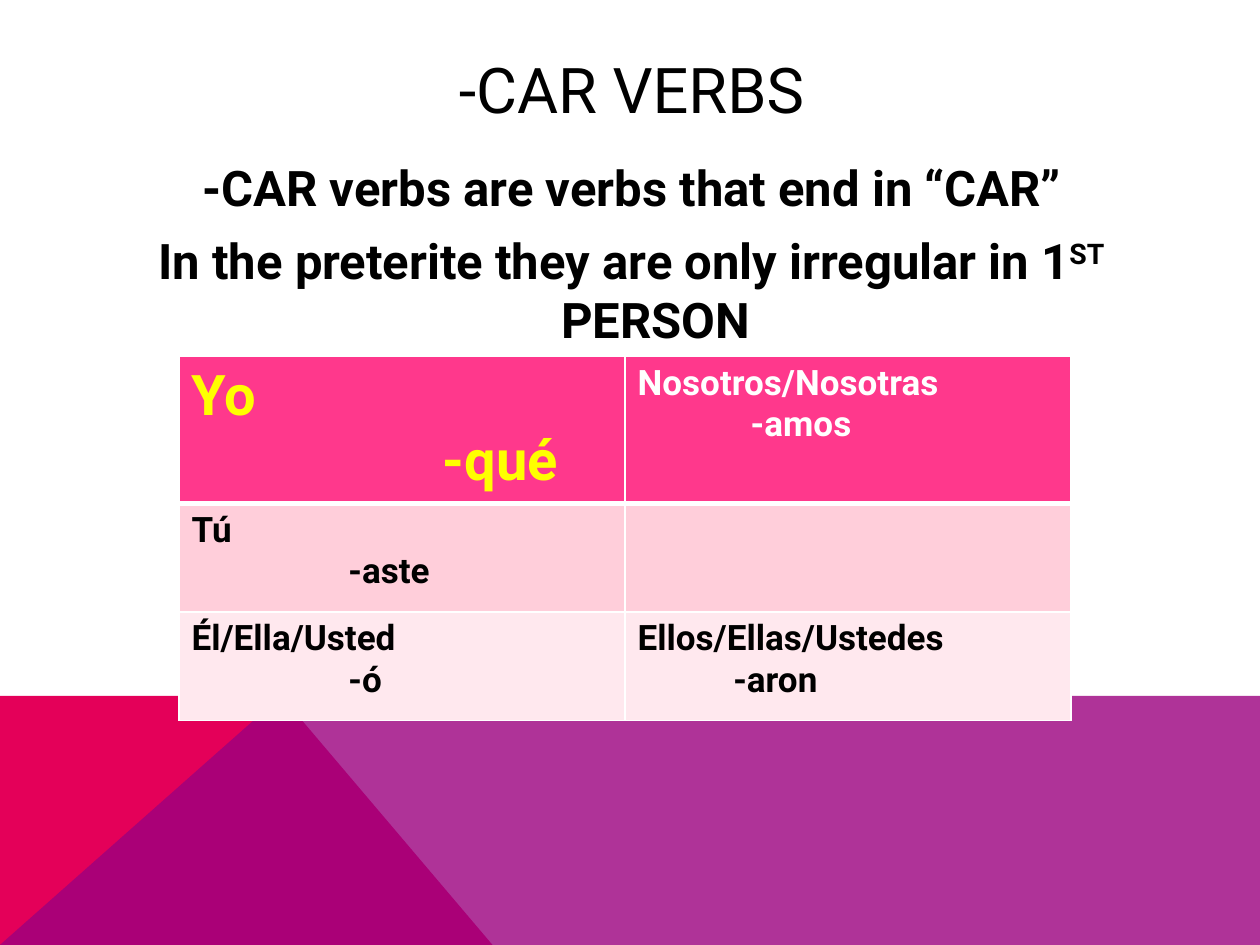
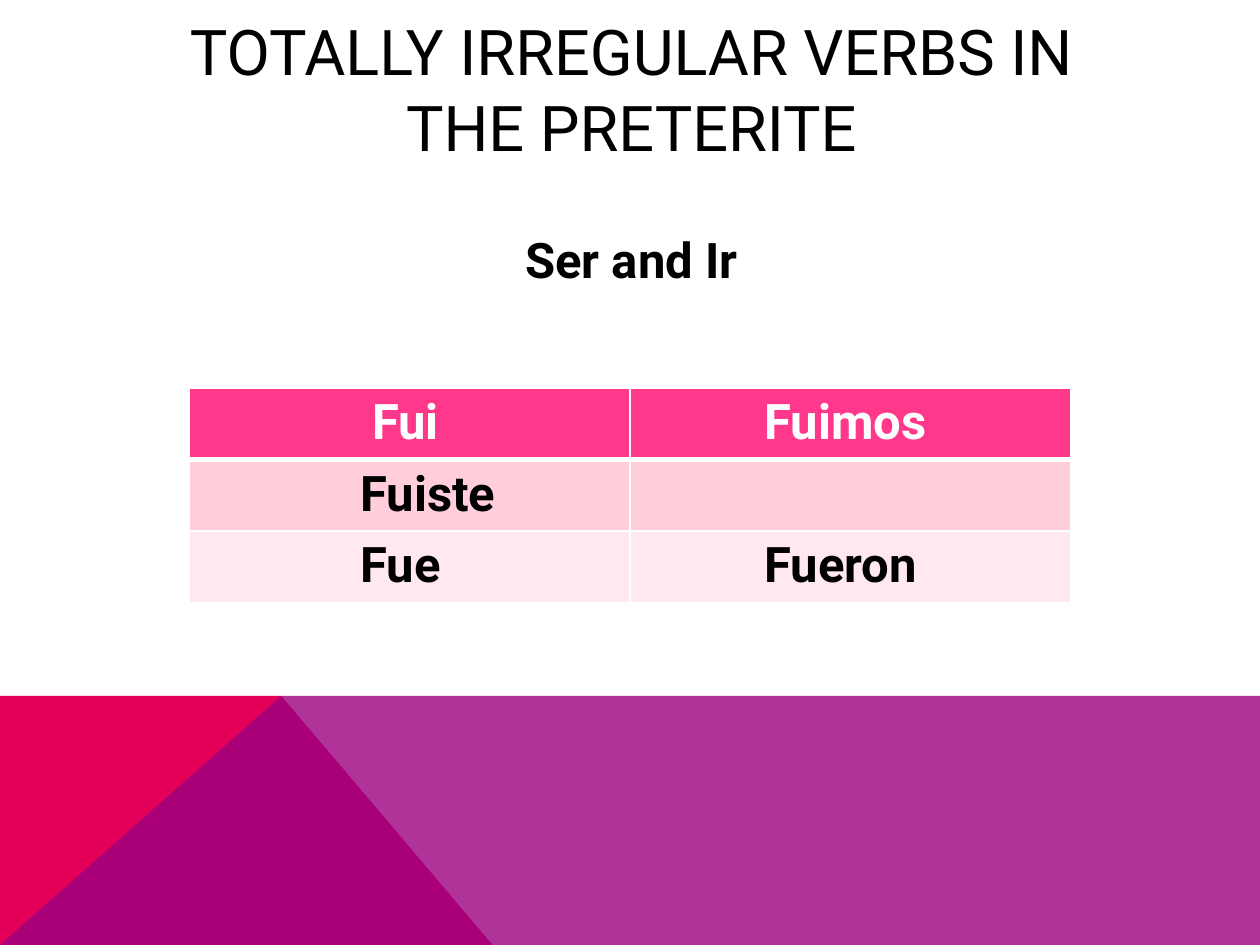
"""Build two Spanish grammar slides on irregular preterite verbs."""
from dataclasses import dataclass

from lxml.etree import SubElement
from pptx import Presentation
from pptx.dml.color import RGBColor
from pptx.enum.text import MSO_ANCHOR, PP_ALIGN
from pptx.oxml import parse_xml
from pptx.oxml.ns import nsdecls, qn
from pptx.util import Cm, Pt


@dataclass(frozen=True)
class Theme:
    font: str = "Roboto"
    text: str = "000000"
    light: str = "FFFFFF"
    accent: str = "FFFF00"
    red: str = "E40059"
    purple: str = "9C007F"
    rows: tuple = ("FF388C", "FFCEDA", "FFE8EE")
    title_size: int = 36
    body_size: int = 28
    ending_size: int = 20
    key_size: int = 32


THEME = Theme()
WIDTH, HEIGHT = Cm(25.4), Cm(19.05)
BAND_TOP, PEAK = Cm(14.03), Cm(5.67)
TEXT_LEFT, TEXT_WIDTH = Cm(2.29), Cm(20.88)


def style_run(r, size, color=THEME.text, bold=True):
    r.font.name = THEME.font
    r.font.size = Pt(size)
    r.font.bold = bold
    r.font.color.rgb = RGBColor.from_string(color)


def add_band(slide, points, color, opacity=100):
    builder = slide.shapes.build_freeform(*points[0], scale=1.0)
    builder.add_line_segments(points[1:], close=True)
    sp = builder.convert_to_shape()
    sp.shadow.inherit = False
    sp.line.fill.background()
    sp.fill.solid()
    sp.fill.fore_color.rgb = RGBColor.from_string(color)
    if opacity < 100:
        srgb = sp._element.spPr.find(".//" + qn("a:srgbClr"))
        SubElement(srgb, qn("a:alpha")).set("val", str(opacity * 1000))


def add_text_frame(slide, top, height):
    tf = slide.shapes.add_textbox(TEXT_LEFT, top, TEXT_WIDTH, height).text_frame
    tf.word_wrap = True
    return tf


def add_slide(prs, title):
    slide = prs.slides.add_slide(prs.slide_layouts[6])
    peak = (PEAK, BAND_TOP)
    add_band(slide, [(0, HEIGHT), (0, BAND_TOP), peak, (Cm(9.93), HEIGHT)], THEME.red)
    add_band(slide, [(0, HEIGHT), peak, (WIDTH, BAND_TOP), (WIDTH, HEIGHT)],
             THEME.purple, opacity=80)
    tf = add_text_frame(slide, Cm(1.02), Cm(1.52))
    tf.vertical_anchor = MSO_ANCHOR.MIDDLE
    p = tf.paragraphs[0]
    p.text = title
    p.alignment = PP_ALIGN.CENTER
    style_run(p.runs[0], THEME.title_size, bold=False)
    return slide


def add_body(slide, lines, inset=Cm(0.13)):
    """Add centred lines, each a list of runs whose odd entries are superscript."""
    tf = add_text_frame(slide, Cm(3.05), Cm(9.93))
    tf.margin_top = inset
    for i, line in enumerate(lines):
        p = tf.add_paragraph() if i else tf.paragraphs[0]
        p.alignment = PP_ALIGN.CENTER
        p.space_before = Pt(8)
        pPr = p._p.get_or_add_pPr()
        pPr.set("marL", str(Cm(0.97)))
        pPr.set("indent", str(-Cm(0.97)))
        for j, text in enumerate(line):
            r = p.add_run()
            r.text = text
            style_run(r, THEME.body_size)
            if j % 2:
                r._r.get_or_add_rPr().set("baseline", "30000")


def set_borders(cell, row):
    widths = {"L": 1, "R": 1, "T": 3 if row == 1 else 1, "B": 3 if row == 0 else 1}
    for i, (side, width) in enumerate(widths.items()):
        ln = parse_xml(
            f'<a:ln{side} {nsdecls("a")} w="{Pt(width)}"><a:solidFill>'
            f'<a:srgbClr val="{THEME.light}"/></a:solidFill></a:ln{side}>')
        cell._tc.get_or_add_tcPr().insert(i, ln)


def fill_cell(cell, lines, size, color):
    """Write lines given as pairs of text and left indent in centimetres."""
    tf = cell.text_frame
    tf.text = "\n".join(text for text, _ in lines)
    for p, (_, indent) in zip(tf.paragraphs, lines):
        p._p.get_or_add_pPr().set("marL", str(Cm(indent)))
        for r in p.runs:
            style_run(r, size, color)


def add_verb_table(slide, box, rows, size):
    table = slide.shapes.add_table(len(rows), len(rows[0]), *box).table
    for i, row in enumerate(rows):
        for j, lines in enumerate(row):
            cell = table.cell(i, j)
            cell.fill.solid()
            cell.fill.fore_color.rgb = RGBColor.from_string(THEME.rows[i])
            set_borders(cell, i)
            fill_cell(cell, lines, size, THEME.text if i else THEME.light)
    return table


def add_car_slide(prs):
    slide = add_slide(prs, "-CAR VERBS")
    add_body(slide, [
        ["-CAR verbs are verbs that end in “CAR”"],
        ["In the preterite they are only irregular in 1", "ST", " PERSON"],
    ])
    endings = [
        [[("Yo", 0), ("-qué", 5.06)], [("Nosotros/Nosotras", 0), ("-amos", 2.28)]],
        [[("Tú", 0), ("-aste", 3.16)], []],
        [[("Él/Ella/Usted", 0), ("-ó", 3.16)],
         [("Ellos/Ellas/Ustedes", 0), ("-aron", 1.93)]],
    ]
    box = Cm(3.61), Cm(7.19), Cm(17.98), Cm(6.55)
    table = add_verb_table(slide, box, endings, THEME.ending_size)
    fill_cell(table.cell(0, 0), endings[0][0], THEME.key_size, THEME.accent)


def add_ser_ir_slide(prs):
    slide = add_slide(prs, "TOTALLY IRREGULAR VERBS IN THE PRETERITE")
    add_body(slide, [["Ser and Ir"]], inset=Cm(1.57))
    forms = [
        [[("Fui", 3.44)], [("Fuimos", 2.46)]],
        [[("Fuiste", 3.2)], []],
        [[("Fue", 3.2)], [("Fueron", 2.46)]],
    ]
    box = Cm(3.81), Cm(7.82), Cm(17.78), Cm(4.2)
    add_verb_table(slide, box, forms, THEME.body_size)


def main():
    prs = Presentation()
    prs.slide_width, prs.slide_height = WIDTH, HEIGHT
    add_car_slide(prs)
    add_ser_ir_slide(prs)
    prs.save("out.pptx")


if __name__ == "__main__":
    main()
